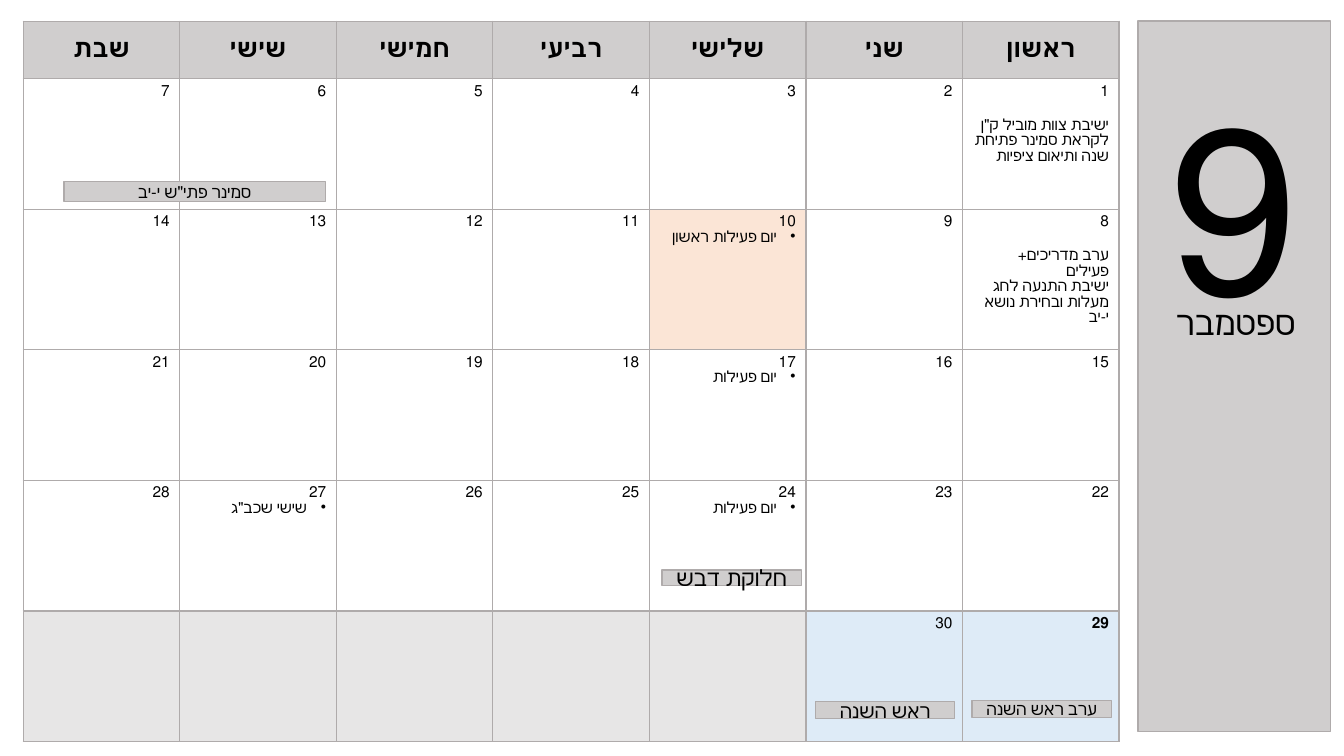
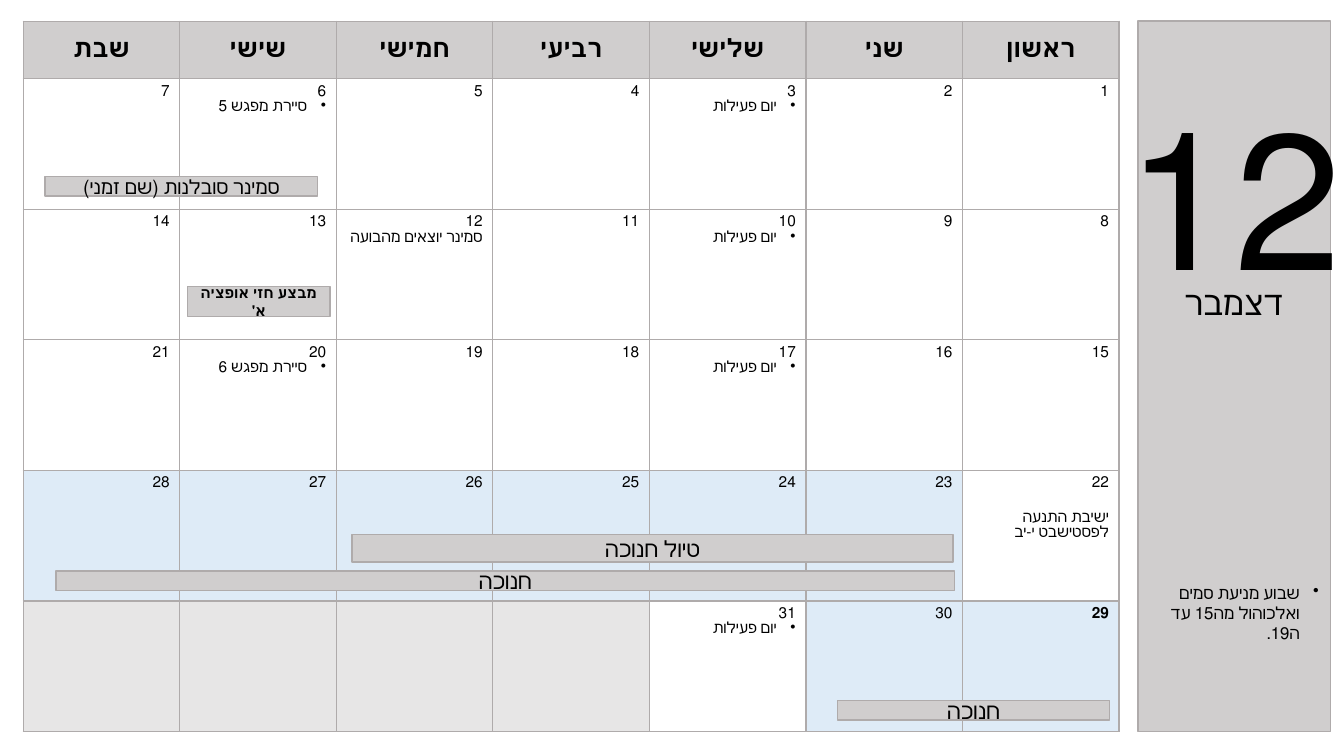
from lxml.etree import SubElement
from pptx import Presentation
from pptx.dml.color import RGBColor
from pptx.enum.shapes import MSO_SHAPE
from pptx.enum.text import MSO_ANCHOR, PP_ALIGN
from pptx.oxml import parse_xml
from pptx.oxml.ns import nsdecls, qn
from pptx.util import Inches, Pt

COLORS = {
    "text": "000000",
    "border": "AFABAB",
    "band": "D0CECE",
    "day": "FFFFFF",
    "outside": "E7E6E6",
    "holiday": "DEEBF7",
    "special": "FBE5D6",
}
FONT = "Calibri"
WEEKDAYS = ["ראשון", "שני", "שלישי", "רביעי", "חמישי", "שישי", "שבת"]

# Calendar grid, in inches
LEFT, TOP = 0.23, 0.21
GRID_WIDTH, GRID_HEIGHT = 10.87, 7.05
HEADER = 0.57
DAYS, WEEKS = 7, 5
COLUMN = GRID_WIDTH / DAYS
ROW = (GRID_HEIGHT - HEADER) / WEEKS
HANGING = 0.19
BLANK_LINE = 13.4

# Each month: events are {day: (style, lines)}; bars and labels are placed as
# (column, row, columns wide, rows high) from the corner of the first week
ACTIVITY_DAY = ("bullet", ["יום פעילות"])
SEPTEMBER = {
    "days": 30,
    "tall_weeks": {2: 0.1},
    "fills": {10: "special", 29: "holiday", 30: "holiday"},
    "events": {
        1: ("gap", ["ישיבת צוות מוביל ק״ן לקראת סמינר פתיחת שנה ותיאום ציפיות"]),
        8: ("gap", ["ערב מדריכים+ פעילים", "ישיבת התנעה לחג מעלות ובחירת נושא י-יב"]),
        10: ("bullet", ["יום פעילות ראשון"]),
        17: ACTIVITY_DAY,
        24: ACTIVITY_DAY,
        27: ("bullet", ["שישי שכב״ג"]),
    },
    "labels": [
        ("9", (7.28, -0.17, 0.93, 2.23), 166, PP_ALIGN.RIGHT, False),
        ("ספטמבר", (7.28, 1.67, 0.93, 0.39), 24, PP_ALIGN.CENTER, False),
    ],
    "bars": [
        ("ערב ראש השנה", (6.06, 4.76, 0.89, 0.13), 12, False),
        ("ראש השנה", (5.06, 4.77, 0.89, 0.13), 14, False),
        ("חלוקת דבש", (4.08, 3.76, 0.89, 0.12), 16, False),
        ("סמינר פתי״ש י-יב", (0.26, 0.79, 1.67, 0.15), 12, False),
    ],
}
DECEMBER = {
    "days": 31,
    "tall_weeks": {},
    "fills": {day: "holiday" for day in range(23, 31)},
    "events": {
        **{day: ACTIVITY_DAY for day in (3, 10, 17, 31)},
        6: ("bullet", ["סיירת מפגש 5"]),
        12: ("plain", ["סמינר יוצאים מהבועה"]),
        20: ("bullet", ["סיירת מפגש 6"]),
        22: ("gap", ["ישיבת התנעה לפסטישבט י-יב"]),
    },
    "labels": [
        ("12", (6.98, -0.05, 1.51, 1.87), 138, PP_ALIGN.CENTER, False),
        ("דצמבר", (7.29, 1.52, 0.89, 0.39), 24, PP_ALIGN.CENTER, False),
        ("שבוע מניעת סמים ואלכוהול מה15 עד ה19.",
         (7.14, 3.82, 1.2, 0.39), 12, PP_ALIGN.RIGHT, True),
    ],
    "bars": [
        ("סמינר סובלנות (שם זמני)", (0.14, 0.75, 1.74, 0.15), 14, False),
        ("חנוכה", (0.21, 3.77, 5.74, 0.15), 16, False),
        ("חנוכה", (5.2, 4.76, 1.74, 0.15), 16, False),
        ("טיול חנוכה", (2.1, 3.49, 3.84, 0.21), 16, False),
        ("מבצע חזי אופציה א׳", (1.05, 1.59, 0.91, 0.23), 10.5, True),
    ],
}


def color(name):
    return RGBColor.from_string(COLORS[name])


def place(column, row, columns, rows):
    """Turn a grid area into left, top, width and height."""
    return (Inches(LEFT + column * COLUMN), Inches(TOP + HEADER + row * ROW),
            Inches(columns * COLUMN), Inches(rows * ROW))


# Text
def write(para, text, size, align, bold=False, bullet=False):
    para.text = text
    para.alignment = align
    font = para.font
    font.name, font.size, font.bold = FONT, Pt(size), bold
    font.color.rgb = color("text")
    properties = para._p.get_or_add_pPr()
    properties.set("rtl", "1")
    if bullet:
        properties.set("marL", str(Inches(HANGING)))
        properties.set("indent", str(-Inches(HANGING)))
        properties.insert_element_before(
            parse_xml(f'<a:buChar {nsdecls("a")} char="•"/>'), "a:defRPr")


# Table cells
def style_cell(cell, fill):
    cell.fill.solid()
    cell.fill.fore_color.rgb = color(fill)
    properties = cell._tc.get_or_add_tcPr()
    for index, side in enumerate(("lnL", "lnR", "lnT", "lnB")):
        line = parse_xml(f'<a:{side} {nsdecls("a")} w="{Pt(1)}"/>')
        paint = SubElement(line, qn("a:solidFill"))
        SubElement(paint, qn("a:srgbClr"), val=COLORS["border"])
        properties.insert(index, line)


def fill_day(cell, day, event):
    frame = cell.text_frame
    write(frame.paragraphs[0], str(day), 11, PP_ALIGN.RIGHT, bold=day == 29)
    style, lines = event
    if style == "gap":
        frame.paragraphs[0].space_after = Pt(BLANK_LINE)
    for line in lines:
        write(frame.add_paragraph(), line, 11, PP_ALIGN.RIGHT,
              bullet=style == "bullet")


def add_calendar(page, month):
    extra = month["tall_weeks"]
    table = page.shapes.add_table(
        WEEKS + 1, DAYS, Inches(LEFT), Inches(TOP), Inches(GRID_WIDTH),
        Inches(GRID_HEIGHT + sum(extra.values()))).table
    table.first_row = table.horz_banding = False
    for column in table.columns:
        column.width = Inches(COLUMN)
    for index, row in enumerate(table.rows):
        row.height = Inches(ROW + extra.get(index, 0) if index else HEADER)

    # Days run from right to left
    for index, weekday in enumerate(WEEKDAYS):
        cell = table.cell(0, DAYS - 1 - index)
        style_cell(cell, "band")
        cell.vertical_anchor = MSO_ANCHOR.MIDDLE
        write(cell.text_frame.paragraphs[0], weekday, 18, PP_ALIGN.CENTER, bold=True)
    for index in range(WEEKS * DAYS):
        week, weekday = divmod(index, DAYS)
        cell, day = table.cell(week + 1, DAYS - 1 - weekday), index + 1
        if day > month["days"]:
            style_cell(cell, "outside")
            continue
        style_cell(cell, month["fills"].get(day, "day"))
        fill_day(cell, day, month["events"].get(day, ("plain", [])))


# Bands and labels
def add_band(page, area):
    band = page.shapes.add_shape(MSO_SHAPE.RECTANGLE, *area)
    band.shadow.inherit = False
    band.fill.solid()
    band.fill.fore_color.rgb = color("band")
    band.line.color.rgb = color("border")
    band.line.width = Pt(1)
    return band


def add_bar(page, text, area, size, bold):
    frame = add_band(page, place(*area)).text_frame
    frame.word_wrap = True
    frame.vertical_anchor = MSO_ANCHOR.MIDDLE
    write(frame.paragraphs[0], text, size, PP_ALIGN.CENTER, bold=bold)


def add_label(page, text, area, size, align, bullet):
    frame = page.shapes.add_textbox(*place(*area)).text_frame
    frame.word_wrap = True
    write(frame.paragraphs[0], text, size, align, bullet=bullet)


def add_month(deck, month):
    page = deck.slides.add_slide(deck.slide_layouts[6])
    add_calendar(page, month)
    left, _, width, _ = place(7.12, 0, 1.23, 0)
    add_band(page, (left, Inches(TOP), width, Inches(GRID_HEIGHT)))
    for label in month["labels"]:
        add_label(page, *label)
    for bar in month["bars"]:
        add_bar(page, *bar)


def main():
    deck = Presentation()
    deck.slide_width, deck.slide_height = Inches(13.33), Inches(7.5)
    for month in (SEPTEMBER, DECEMBER):
        add_month(deck, month)
    deck.save("out.pptx")


if __name__ == "__main__":
    main()
